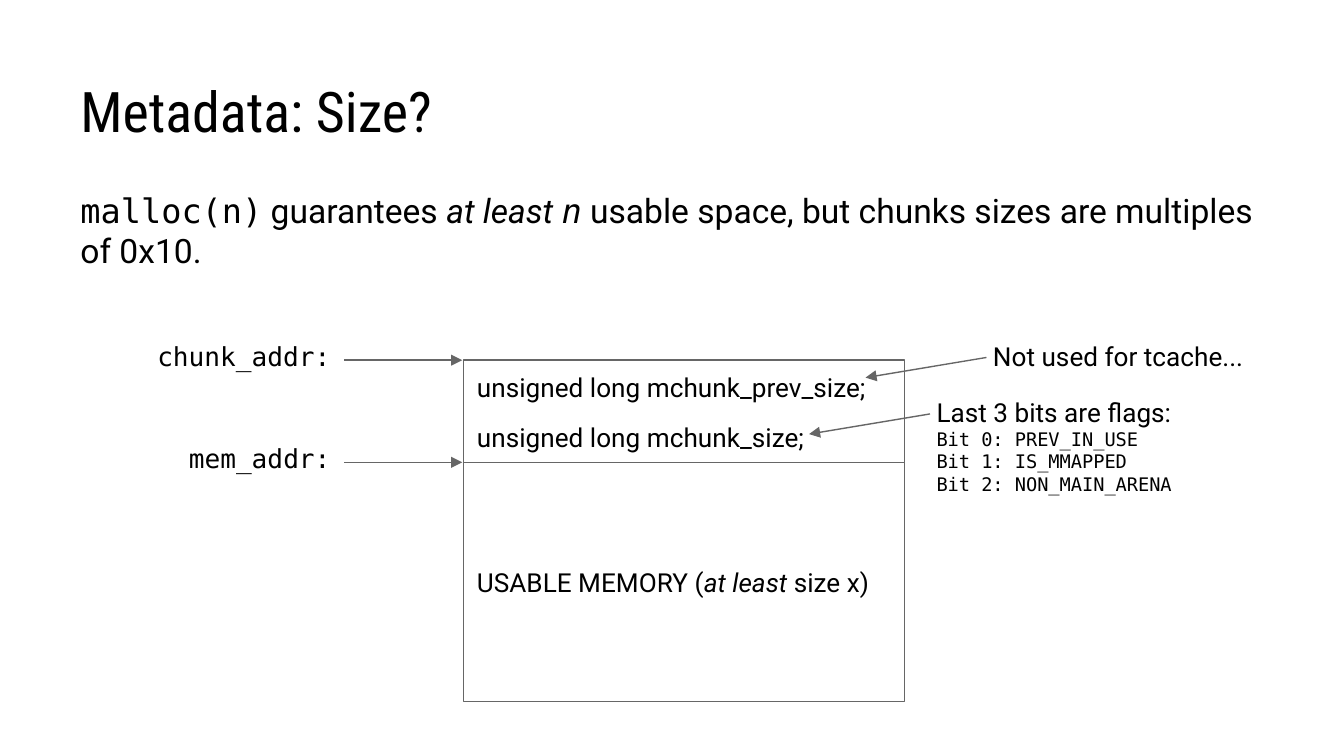
from dataclasses import dataclass

from lxml import etree
from pptx import Presentation
from pptx.dml.color import RGBColor
from pptx.enum.shapes import MSO_CONNECTOR, MSO_SHAPE
from pptx.enum.text import MSO_ANCHOR, PP_ALIGN
from pptx.oxml.ns import qn
from pptx.util import Inches, Pt

RECT = MSO_SHAPE.RECTANGLE
STRAIGHT = MSO_CONNECTOR.STRAIGHT
LEFT, RIGHT = PP_ALIGN.LEFT, PP_ALIGN.RIGHT
TOP, MIDDLE, BOTTOM = MSO_ANCHOR.TOP, MSO_ANCHOR.MIDDLE, MSO_ANCHOR.BOTTOM


@dataclass(frozen=True)
class Theme:
    ink: RGBColor = RGBColor(0, 0, 0)
    paper: RGBColor = RGBColor(0xFF, 0xFF, 0xFF)
    line: RGBColor = RGBColor(0x66, 0x66, 0x66)
    line_width: float = 0.75
    heading: str = "Roboto Condensed"
    sans: str = "Roboto"
    mono: str = "DejaVu Sans Mono"
    title_size: int = 30
    body_size: int = 18
    label_size: int = 14
    small_size: int = 10
    margin: float = 0.1


THEME = Theme()


def run(text, font=THEME.sans, size=THEME.label_size, italic=False):
    """Describe one piece of text and its format."""
    return {"text": text, "font": font, "size": size, "italic": italic}


def write(tf, paragraphs, align=LEFT, anchor=TOP, gap=0):
    """Fill a text frame; each paragraph is a list of runs, gap points apart."""
    tf.word_wrap = True
    tf.vertical_anchor = anchor
    tf.margin_left = tf.margin_right = Inches(THEME.margin)
    tf.margin_top = tf.margin_bottom = Inches(THEME.margin)
    for i, runs in enumerate(paragraphs):
        p = tf.add_paragraph() if i else tf.paragraphs[0]
        p.alignment = align
        p.space_before = Pt(gap if i else 0)
        for item in runs:
            r = p.add_run()
            r.text = item["text"]
            r.font.name = item["font"]
            r.font.size = Pt(item["size"])
            r.font.italic = item["italic"]
            r.font.color.rgb = THEME.ink


class Sketch:
    def __init__(self, slide, theme):
        self.s = slide
        self.theme = theme
        slide.background.fill.solid()
        slide.background.fill.fore_color.rgb = theme.paper

    def stroke(self, line):
        line.color.rgb = self.theme.line
        line.width = Pt(self.theme.line_width)

    def text(self, x, y, w, h, paragraphs, **style):
        sp = self.s.shapes.add_textbox(*map(Inches, (x, y, w, h)))
        write(sp.text_frame, paragraphs, **style)

    def box(self, x, y, w, h, paragraphs, **style):
        sp = self.s.shapes.add_shape(RECT, *map(Inches, (x, y, w, h)))
        sp.shadow.inherit = False
        sp.fill.solid()
        sp.fill.fore_color.rgb = self.theme.paper
        self.stroke(sp.line)
        write(sp.text_frame, paragraphs, anchor=MIDDLE, **style)

    def arrow(self, x1, y1, x2, y2):
        sp = self.s.shapes.add_connector(STRAIGHT, *map(Inches, (x1, y1, x2, y2)))
        self.stroke(sp.line)
        properties = sp._element.spPr
        etree.SubElement(properties.find(qn("a:ln")), qn("a:tailEnd"), type="triangle")
        etree.SubElement(properties, qn("a:effectLst"))


def main():
    prs = Presentation()
    prs.slide_width = Inches(10)
    prs.slide_height = prs.slide_width * 9 // 16
    sketch = Sketch(prs.slides.add_slide(prs.slide_layouts[6]), THEME)
    mono, body, small = THEME.mono, THEME.body_size, THEME.small_size

    sketch.text(0.5, 1.31, 9, 4.07, [[
        run("malloc(n)", mono, body),
        run(" guarantees ", size=body),
        run("at least ", size=body, italic=True),
        run("n", mono, body, italic=True),
        run(" usable space, but chunks sizes are multiples of 0x10.", size=body),
    ]])
    sketch.text(0.5, 0.23, 9, 0.94,
                [[run("Metadata: Size?", THEME.heading, THEME.title_size)]],
                anchor=BOTTOM)

    # The chunk: header on top of usable memory
    chunk_x, chunk_w = 3.45, 3.28
    chunk_y, mem_y = 2.68, 3.44
    sketch.box(chunk_x, chunk_y, chunk_w, 0.77,
               [[run("unsigned long mchunk_prev_size;")],
                [run("unsigned long mchunk_size;")]], gap=10)
    sketch.box(chunk_x, mem_y, chunk_w, 1.78,
               [[run("USABLE MEMORY ("), run("at least", italic=True),
                 run(" size x)")]])

    # Addresses pointing at the top edge of each part
    label_x, label_w = 0.93, 1.63
    for name, y in (("mem_addr:", mem_y), ("chunk_addr:", chunk_y)):
        sketch.arrow(label_x + label_w, y, chunk_x - 0.01, y)
        sketch.text(label_x, y - 0.25, label_w, 0.49, [[run(name, mono)]], align=RIGHT)

    # Notes pointing back at the header fields
    flags = ("Bit 0: PREV_IN_USE", "Bit 1: IS_MMAPPED", "Bit 2: NON_MAIN_ARENA")
    notes = (
        (6.87, 2.85, [[run("Last 3 bits are flags:")],
                      *([run(flag, mono, small)] for flag in flags)]),
        (7.29, 2.43, [[run("Not used for tcache...")]]),
    )
    for x, y, paragraphs in notes:
        sketch.text(x, y, 2.63, 1.53, paragraphs)
        sketch.arrow(x + 0.05, y + 0.23, x - 0.85, y + 0.38)

    prs.save("out.pptx")


if __name__ == "__main__":
    main()
